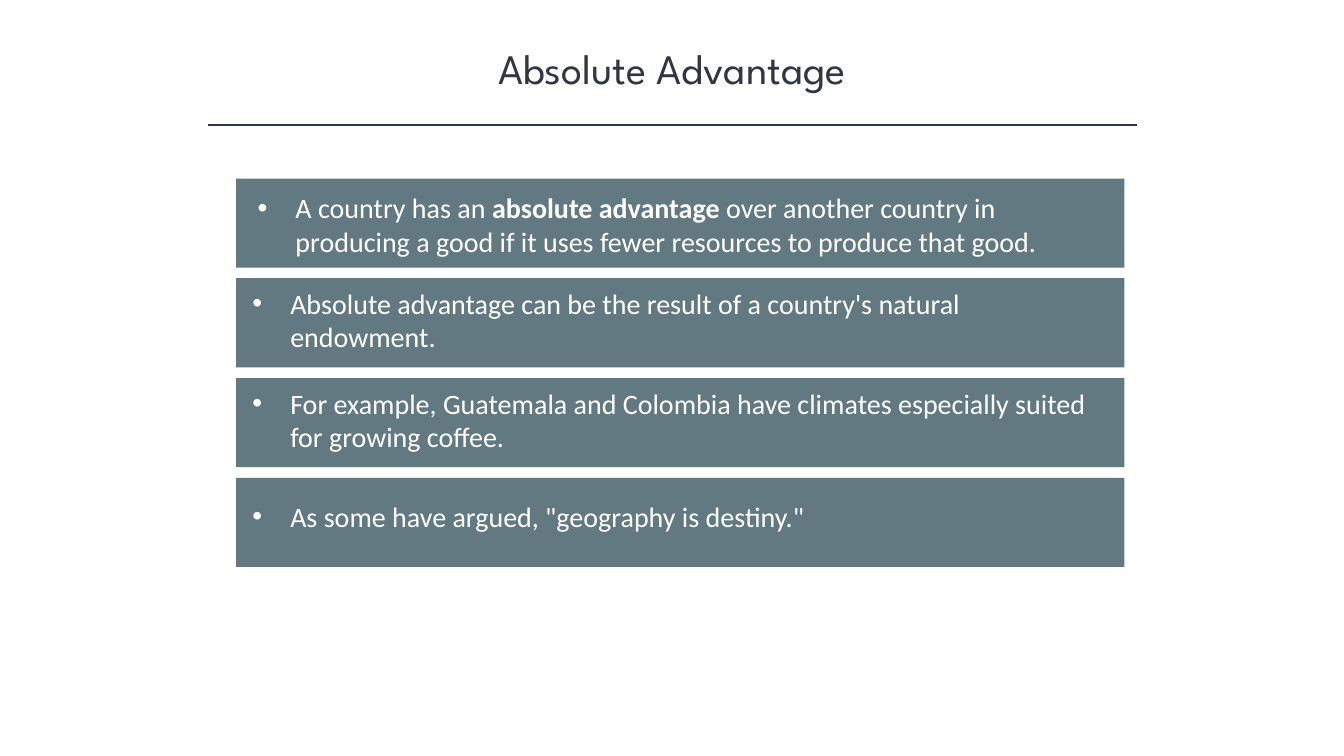
import dataclasses

import pptx
import pptx.dml.color
import pptx.enum.shapes
import pptx.enum.text
import pptx.oxml.ns
import pptx.util
from lxml import etree

PIXEL = 9525  # 96 px to the inch


@dataclasses.dataclass(frozen=True)
class Theme:
    ink: str = "323542"
    bar: str = "627981"
    bar_text: str = "FFFFFF"
    title_font: str = "League Spartan"
    body_font: str = "Calibri"
    title_size: int = 30
    body_size: int = 20
    rule_width: int = 1


THEME = Theme()

# Each statement: text inset from its bar (x, y), text height, (text, bold) runs
STATEMENTS = [
    ((11, 7), 74, [
        ("A country has an ", False),
        ("absolute advantage ", True),
        ("over another country in producing a good if it uses fewer "
         "resources to produce that good.", False),
    ]),
    ((6, 3), 74, [
        ("Absolute advantage can be the result of a country's natural endowment.", False),
    ]),
    ((6, 3), 74, [
        ("For example, Guatemala and Colombia have climates especially suited "
         "for growing coffee.", False),
    ]),
    ((6, 16), 42, [('As some have argued, "geography is destiny."', False)]),
]


def px(*lengths):
    return [pptx.util.Emu(length * PIXEL) for length in lengths]


def color(code):
    return pptx.dml.color.RGBColor.from_string(code)


def fill_solid(shape, code):
    shape.fill.solid()
    shape.fill.fore_color.rgb = color(code)


def set_font(paragraph, name, size, code):
    paragraph.font.name = name
    paragraph.font.size = pptx.util.Pt(size)
    paragraph.font.color.rgb = color(code)


def add_text_box(shapes, left, top, width, height):
    """Add a wrapping text box and return it with its first paragraph."""
    box = shapes.add_textbox(*px(left, top, width, height))
    box.text_frame.word_wrap = True
    box.text_frame.auto_size = pptx.enum.text.MSO_AUTO_SIZE.SHAPE_TO_FIT_TEXT
    return box, box.text_frame.paragraphs[0]


def add_bullet(paragraph, hang):
    properties = paragraph._p.get_or_add_pPr()
    properties.set("marL", str(hang * PIXEL))
    properties.set("indent", str(-hang * PIXEL))
    for tag, attribute, value in (("a:buFont", "typeface", "Arial"),
                                  ("a:buChar", "char", "•")):
        etree.SubElement(properties, pptx.oxml.ns.qn(tag)).set(attribute, value)


def add_heading(slide, text, left, top, width, height):
    """Add the centred title with the rule below it."""
    _, paragraph = add_text_box(slide.shapes, left, top, width, height)
    paragraph.text = text
    paragraph.alignment = pptx.enum.text.PP_ALIGN.CENTER
    set_font(paragraph, THEME.title_font, THEME.title_size, THEME.ink)

    rule_top = top + height + 24
    rule = slide.shapes.add_connector(
        pptx.enum.shapes.MSO_CONNECTOR.STRAIGHT,
        *px(left + 38, rule_top, left + width - 37, rule_top))
    rule.line.color.rgb = color(THEME.ink)
    rule.line.width = pptx.util.Pt(THEME.rule_width)
    etree.SubElement(rule._element.spPr, pptx.oxml.ns.qn("a:effectLst"))


def add_statement(slide, statement, left, top, width, height):
    """Group a bar with its bulleted text."""
    (inset_x, inset_y), text_height, runs = statement
    group = slide.shapes.add_group_shape()
    bar = group.shapes.add_shape(pptx.enum.shapes.MSO_SHAPE.RECTANGLE,
                                 *px(left, top, width, height))
    bar.shadow.inherit = False
    fill_solid(bar, THEME.bar)
    bar.line.fill.background()

    box, paragraph = add_text_box(group.shapes, left + inset_x, top + inset_y,
                                  width - 26, text_height)
    fill_solid(box, THEME.bar)
    add_bullet(paragraph, 36)
    set_font(paragraph, THEME.body_font, THEME.body_size, THEME.bar_text)
    for text, bold in runs:
        run = paragraph.add_run()
        run.text = text
        if bold:
            run.font.bold = True


def add_statements(slide, statements, left, top, width, height, gap):
    """Stack equal bars down the given box."""
    pitch = (height + gap) // len(statements)
    for index, statement in enumerate(statements):
        add_statement(slide, statement, left, top + index * pitch, width, pitch - gap)


def main():
    presentation = pptx.Presentation()
    presentation.slide_width, presentation.slide_height = px(1280, 720)
    slide = presentation.slides.add_slide(presentation.slide_layouts[6])
    add_heading(slide, "Absolute Advantage", 160, 36, 960, 59)
    add_statements(slide, STATEMENTS, 225, 170, 846, 370, gap=10)
    presentation.save("out.pptx")


if __name__ == "__main__":
    main()
